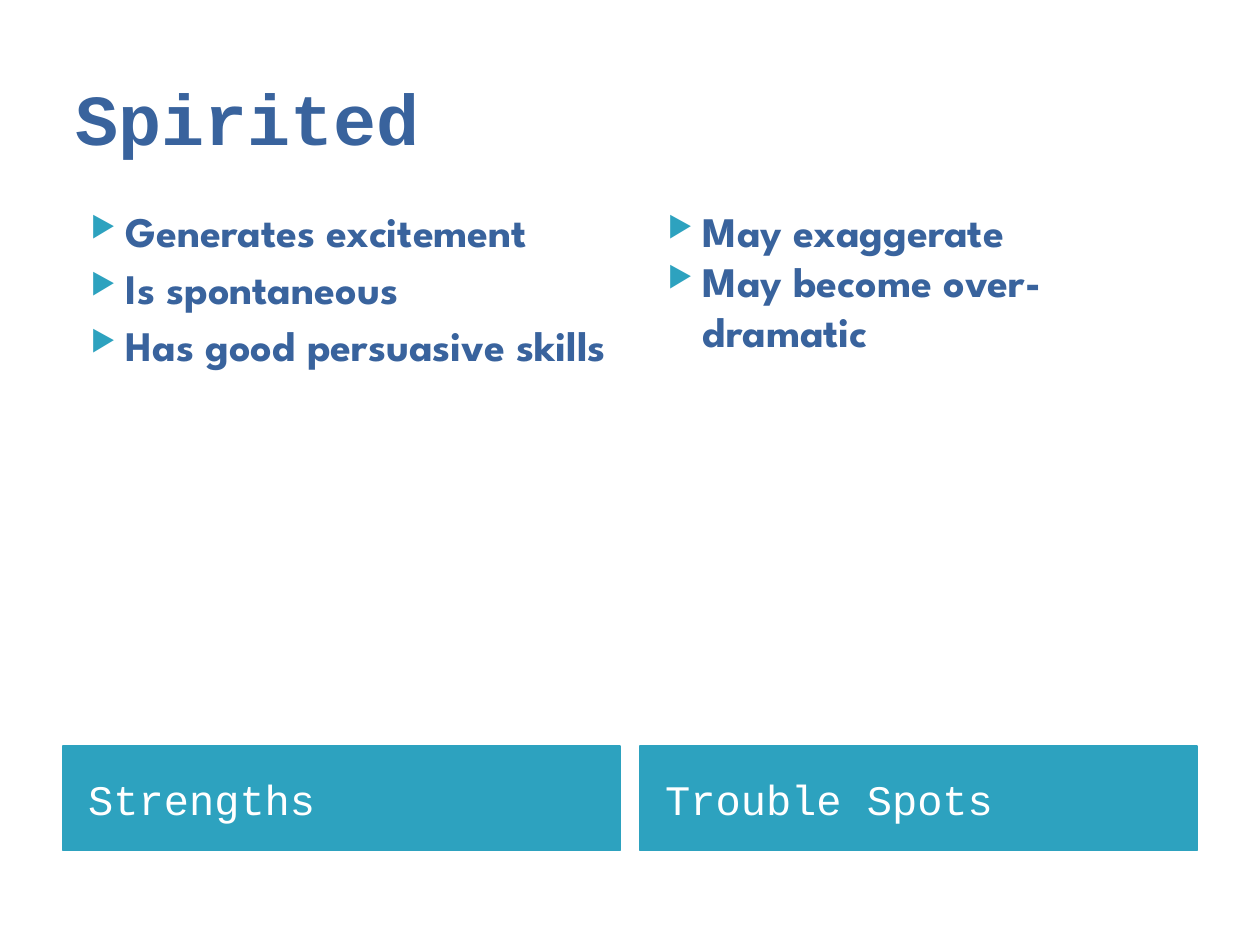
import pptx
import pptx.util
import pptx.dml.color
import pptx.enum.shapes
import pptx.enum.text
import pptx.oxml
import pptx.oxml.ns

Cm = pptx.util.Cm
Pt = pptx.util.Pt
Anchor = pptx.enum.text.MSO_ANCHOR

# Content: heading, space between points, points
TITLE = "Spirited"
COLUMNS = [
    ("Strengths", 4,
     ["Generates excitement", "Is spontaneous", "Has good persuasive skills"]),
    ("Trouble Spots", 0,
     ["May exaggerate", "May become over-dramatic"]),
]

COLORS = {"text": "39639D", "accent": "2DA2BF", "light": "FFFFFF"}
MONO, SANS = "Courier New", "League Spartan"

# Layout in centimetres
WIDTH, HEIGHT = 25.4, 19.05
MARGIN, GAP = 1.27, 0.4
INNER = WIDTH - 2 * MARGIN
COL = (INNER - GAP) / 2


def rgb(name):
    return pptx.dml.color.RGBColor.from_string(COLORS[name])


def write(para, text, size, face, color, bold=False):
    run = para.add_run()
    run.text = text
    font = run.font
    font.size, font.name, font.bold = Pt(size), face, bold
    font.color.rgb = rgb(color)


def add_box(slide, left, top, width, height, anchor):
    box = slide.shapes.add_textbox(Cm(left), Cm(top), Cm(width), Cm(height))
    frame = box.text_frame
    frame.word_wrap = True
    frame.vertical_anchor = anchor
    return frame


def add_bullet(para):
    props = para._p.get_or_add_pPr()
    props.set("marL", str(Cm(1.02)))
    props.set("indent", str(Cm(-0.71)))
    space = pptx.oxml.ns.nsdecls("a")
    for xml in (
        f'<a:buClr {space}><a:srgbClr val="{COLORS["accent"]}"/></a:buClr>',
        f'<a:buSzPct {space} val="68000"/>',
        f'<a:buChar {space} char="▶"/>',
    ):
        props.append(pptx.oxml.parse_xml(xml))


def add_points(slide, left, points, gap):
    frame = add_box(slide, left, 4.01, COL, 10.95, Anchor.TOP)
    for i, point in enumerate(points):
        para = frame.add_paragraph() if i else frame.paragraphs[0]
        add_bullet(para)
        para.space_before = Pt(gap if i else 0)
        write(para, point, 24, SANS, "text", True)


def add_label(slide, left, text):
    bar = slide.shapes.add_shape(
        pptx.enum.shapes.MSO_SHAPE.RECTANGLE,
        Cm(left), Cm(15.04), Cm(COL), Cm(2.11))
    bar.shadow.inherit = False
    bar.fill.solid()
    bar.fill.fore_color.rgb = rgb("accent")
    bar.line.color.rgb = rgb("accent")
    bar.line.width = Pt(0.75)
    frame = bar.text_frame
    frame.word_wrap = True
    frame.vertical_anchor = Anchor.MIDDLE
    frame.margin_left = Cm(0.51)
    para = frame.paragraphs[0]
    para.alignment = pptx.enum.text.PP_ALIGN.LEFT
    write(para, text, 24, MONO, "light")


def main():
    deck = pptx.Presentation()
    deck.slide_width, deck.slide_height = Cm(WIDTH), Cm(HEIGHT)
    slide = deck.slides.add_slide(deck.slide_layouts[6])

    # Title
    frame = add_box(slide, MARGIN, 0.76, INNER, 3.18, Anchor.MIDDLE)
    write(frame.paragraphs[0], TITLE, 41, MONO, "text", True)

    # Columns: points above, label bar below
    for i, (label, gap, points) in enumerate(COLUMNS):
        left = MARGIN + i * (COL + GAP)
        add_label(slide, left, label)
        add_points(slide, left, points, gap)

    deck.save("out.pptx")


if __name__ == "__main__":
    main()
